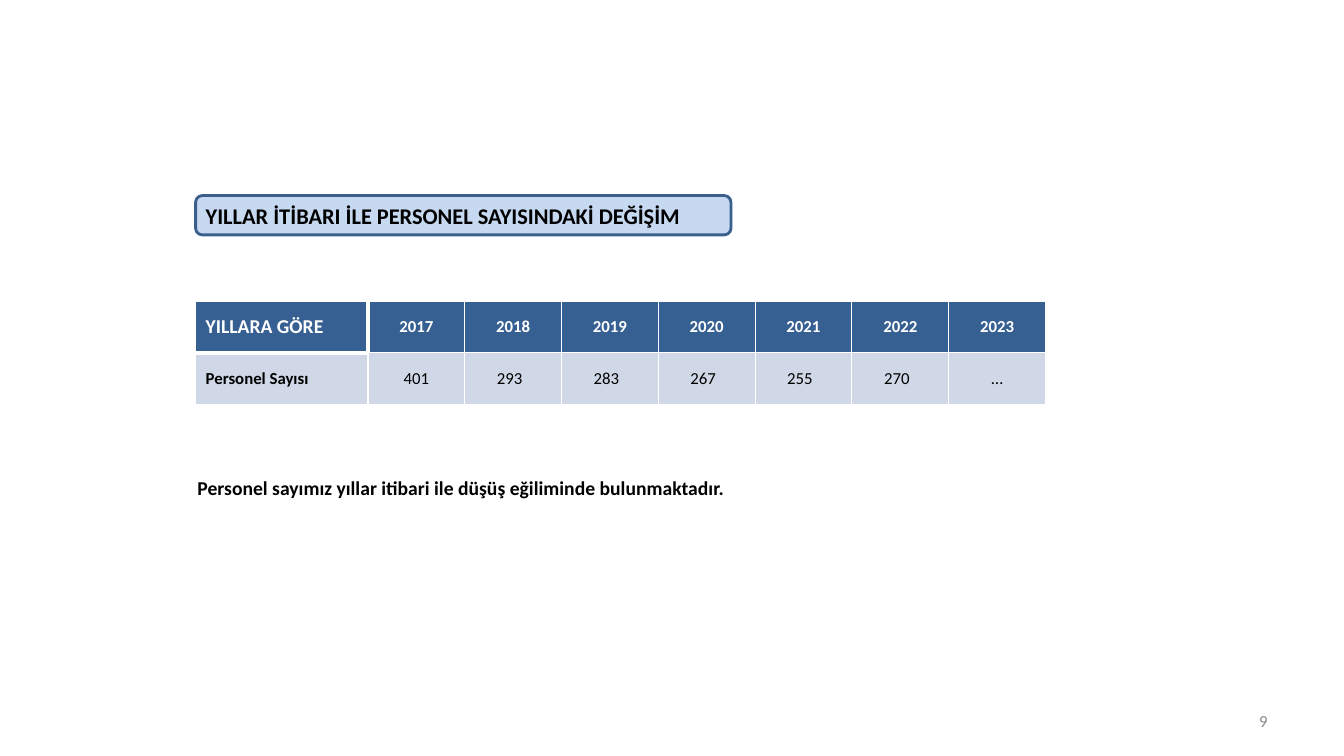
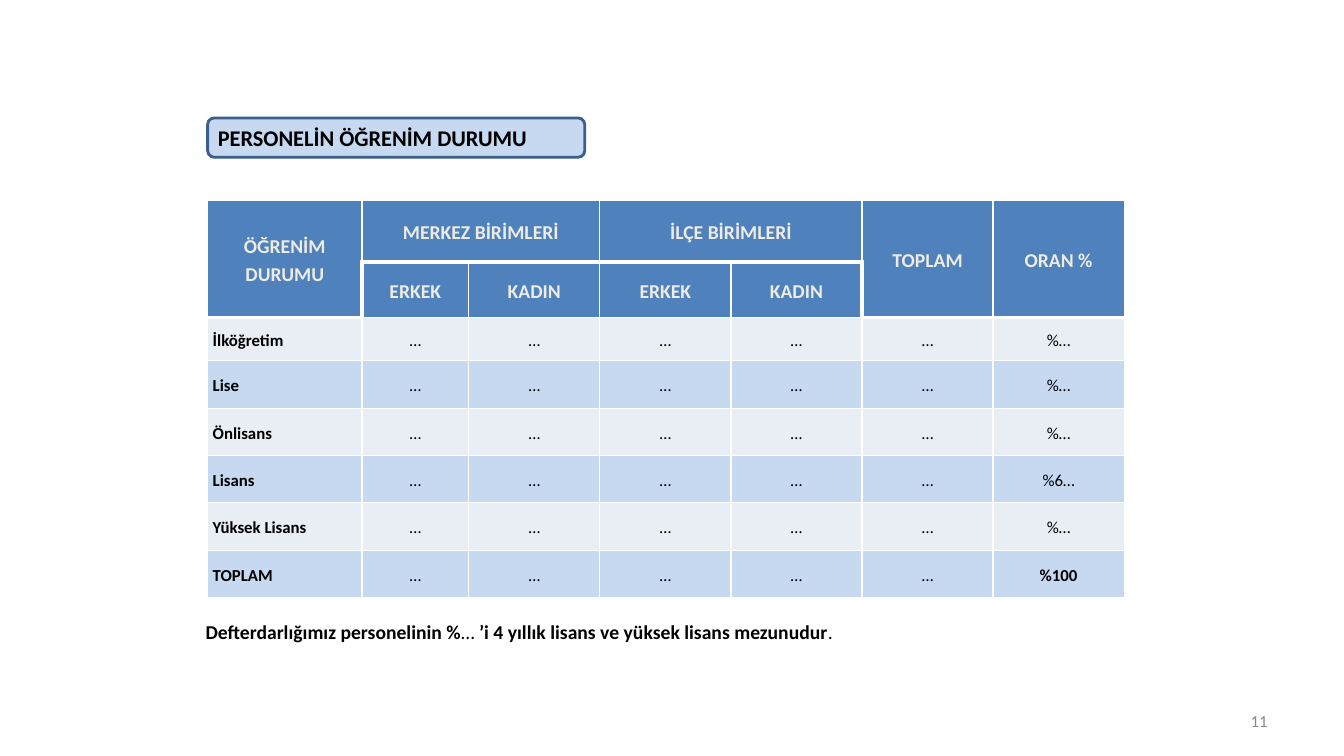
from lxml import etree
from pptx import Presentation
from pptx.dml.color import RGBColor
from pptx.enum import shapes, text
from pptx.oxml import ns
from pptx.util import Inches, Pt

# Shared look
FONT = "Calibri"
BLACK = RGBColor(0x00, 0x00, 0x00)
WHITE = RGBColor(0xFF, 0xFF, 0xFF)
GREY = RGBColor(0x89, 0x89, 0x89)
CREAM = RGBColor(0xEE, 0xEC, 0xE1)
NAVY = RGBColor(0x37, 0x60, 0x92)
OUTLINE = RGBColor(0x3A, 0x5F, 0x8C)
BLUE = RGBColor(0x4F, 0x81, 0xBD)
SKY = RGBColor(0xC6, 0xD9, 0xF1)
MIST = RGBColor(0xD0, 0xD8, 0xE8)
PALE = RGBColor(0xE9, 0xED, 0xF4)
LEFT, CENTER, RIGHT = text.PP_ALIGN.LEFT, text.PP_ALIGN.CENTER, text.PP_ALIGN.RIGHT
THIN, THICK = Pt(1), Pt(3)


def style(p, size, color, bold=False, align=LEFT):
    p.alignment = align
    for r in p.runs:
        f = r.font
        f.name, f.size, f.bold = FONT, Pt(size), bold
        f.color.rgb = color


def add_title(s, title, left, top, width):
    """Title placeholder on a rounded band."""
    box = Inches(left), Inches(top), Inches(width), Inches(0.39)
    band = s.shapes.add_shape(shapes.MSO_SHAPE.ROUNDED_RECTANGLE, *box)
    band.shadow.inherit = False
    band.fill.solid()
    band.fill.fore_color.rgb = SKY
    band.line.color.rgb = OUTLINE
    band.line.width = Pt(2)
    sp = s.shapes.title
    sp._element.addprevious(band._element)
    sp.left, sp.top, sp.width, sp.height = box
    tf = sp.text_frame
    tf.text = title
    tf.auto_size = text.MSO_AUTO_SIZE.NONE
    tf.vertical_anchor = text.MSO_ANCHOR.MIDDLE
    style(tf.paragraphs[0], 16, BLACK, True)


def add_text(s, left, top, width, height):
    sp = s.shapes.add_textbox(Inches(left), Inches(top), Inches(width), Inches(height))
    sp.text_frame.word_wrap = True
    return sp.text_frame


def add_note(s, left, top, parts):
    """Closing sentence; parts alternate between bold and regular."""
    p = add_text(s, left, top, 8.91, 0.34).paragraphs[0]
    for part in parts:
        p.add_run().text = part
    style(p, 14, BLACK)
    for r in p.runs[::2]:
        r.font.bold = True


def add_page_number(s, number):
    tf = add_text(s, 9.56, 6.95, 3.11, 0.4)
    tf.vertical_anchor = text.MSO_ANCHOR.MIDDLE
    tf.text = str(number)
    style(tf.paragraphs[0], 12, GREY, align=RIGHT)


def set_borders(cell, thick):
    tcPr = cell._tc.get_or_add_tcPr()
    for side in "LRTB":
        width = THICK if side in thick else THIN
        ln = etree.SubElement(tcPr, ns.qn(f"a:ln{side}"), w=str(width))
        fill = etree.SubElement(ln, ns.qn("a:solidFill"))
        etree.SubElement(fill, ns.qn("a:srgbClr"), val=str(WHITE))


def add_grid(s, left, top, cols, rows, thick):
    """Table with white borders; thick maps (row, column) to heavy sides."""
    table = s.shapes.add_table(len(rows), len(cols), Inches(left), Inches(top),
                               Inches(sum(cols)), Inches(sum(rows))).table
    for col, width in zip(table.columns, cols):
        col.width = Inches(width)
    for row, height in zip(table.rows, rows):
        row.height = Inches(height)
    for r in range(len(rows)):
        for c in range(len(cols)):
            set_borders(table.cell(r, c), thick.get((r, c), ""))
    return table


def fill_cell(cell, label, fill, size, color, bold=False, align=CENTER,
              inset=(0.05, 0), spacing=None):
    cell.fill.solid()
    cell.fill.fore_color.rgb = fill
    cell.vertical_anchor = text.MSO_ANCHOR.MIDDLE
    cell.margin_left = cell.margin_right = Inches(inset[0])
    cell.margin_top = cell.margin_bottom = Inches(inset[1])
    cell.text_frame.text = label
    p = cell.text_frame.paragraphs[0]
    p.line_spacing = spacing
    style(p, size, color, bold, align)


def staff_by_year(s):
    add_title(s, "YILLAR İTİBARI İLE PERSONEL SAYISINDAKİ DEĞİŞİM", 1.94, 1.94, 5.31)
    counts = ["401", "293", "283", "267", "255", "270", "…"]
    thick = {(0, 0): "RB", (0, 1): "L", (1, 0): "T"}
    table = add_grid(s, 1.94, 2.99, [1.71] + [0.96] * len(counts), [0.51] * 2, thick)
    wide = (0.1, 0.05)
    fill_cell(table.cell(0, 0), "YILLARA GÖRE", NAVY, 14, WHITE, True, LEFT, wide)
    fill_cell(table.cell(1, 0), "Personel Sayısı", MIST, 12, BLACK, True, LEFT, wide)
    for c, count in enumerate(counts, 1):
        fill_cell(table.cell(0, c), str(2016 + c), NAVY, 12, WHITE, True, inset=wide)
        fill_cell(table.cell(1, c), count, MIST, 12, BLACK)
        if 1 < c < len(counts):  # these counts sit slightly left of centre
            table.cell(1, c).margin_right = Inches(0.12)
    add_note(s, 1.86, 4.67,
             ["Personel sayımız yıllar itibari ile düşüş eğiliminde bulunmaktadır."])
    add_page_number(s, 9)


def staff_by_education(s):
    add_title(s, "PERSONELİN ÖĞRENİM DURUMU", 2.06, 1.17, 3.74)
    # Heavy rules under the header and around the gender columns
    tall = (0, 5, 6)
    thick = {(0, c): "B" for c in range(7)}
    thick.update({(1, c): "B" if c in tall else "T" for c in range(7)})
    thick.update({(2, c): "T" for c in tall})
    thick.update({(1, 1): "LT", (1, 4): "RT"})
    table = add_grid(s, 2.06, 1.99, [1.53, 1.06] + [1.3] * 5,
                     [0.61, 0.55, 0.43] + [0.47] * 5, thick)

    # Two-row header
    for c in tall:
        table.cell(0, c).merge(table.cell(1, c))
    for c in (1, 3):
        table.cell(0, c).merge(table.cell(0, c + 1))
    headers = {(0, 0): "ÖĞRENİM DURUMU", (0, 1): "MERKEZ BİRİMLERİ",
               (0, 3): "İLÇE BİRİMLERİ", (0, 5): "TOPLAM", (0, 6): "ORAN %",
               (1, 1): "ERKEK", (1, 2): "KADIN", (1, 3): "ERKEK", (1, 4): "KADIN"}
    for (r, c), label in headers.items():
        fill_cell(table.cell(r, c), label, BLUE, 14, CREAM, True, spacing=1.15)

    # One banded row per level
    levels = [("İlköğretim", "%…"), ("Lise", "%…"), ("Önlisans", "%…"),
              ("Lisans", "%6…"), ("Yüksek Lisans", "%…"), ("TOPLAM", "%100")]
    for r, (level, share) in enumerate(levels, 2):
        for c, label in enumerate([level] + ["…"] * 5 + [share]):
            fill_cell(table.cell(r, c), label, SKY if r % 2 else PALE, 12, BLACK,
                      c == 0 or label == "%100", CENTER if c else LEFT, spacing=1.15)
    add_note(s, 1.94, 6.1, ["Defterdarlığımız personelinin %", "… ",
                            "’i 4 yıllık lisans ve yüksek lisans mezunudur", "."])
    add_page_number(s, 11)


def main():
    prs = Presentation()
    prs.slide_width, prs.slide_height = Inches(13.33), Inches(7.5)
    for build in (staff_by_year, staff_by_education):
        build(prs.slides.add_slide(prs.slide_layouts[5]))
    prs.save("out.pptx")


if __name__ == "__main__":
    main()
